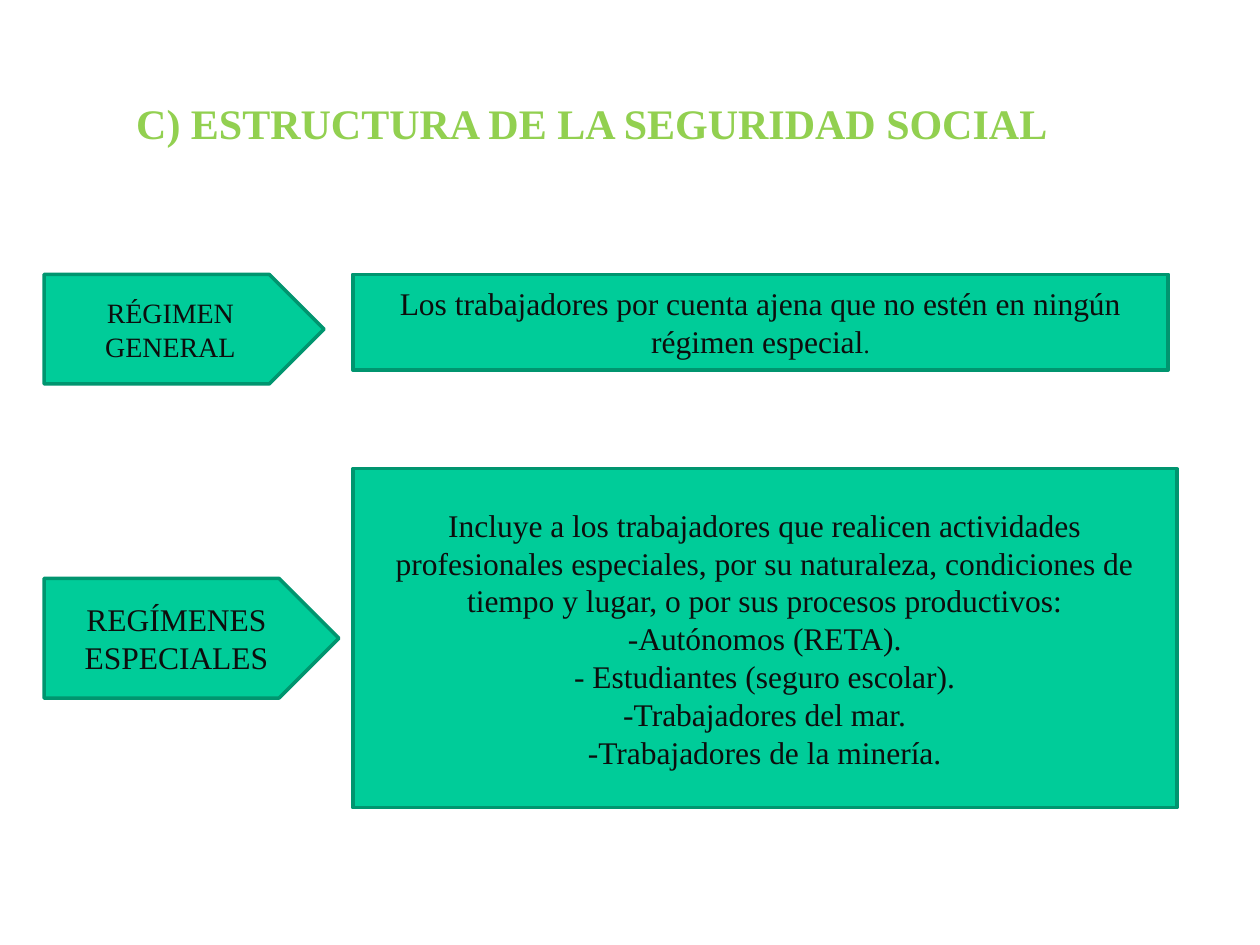
import pptx
import pptx.dml.color
import pptx.enum.shapes
import pptx.enum.text
import pptx.util

Pt = pptx.util.Pt
RGBColor = pptx.dml.color.RGBColor
Shapes = pptx.enum.shapes.MSO_SHAPE
Align = pptx.enum.text.PP_ALIGN
Anchor = pptx.enum.text.MSO_ANCHOR

WHITE = RGBColor(0xFF, 0xFF, 0xFF)
LIME = RGBColor(0x92, 0xD0, 0x50)
GREEN = RGBColor(0x00, 0xCC, 0x99)
DARK_GREEN = RGBColor(0x00, 0x95, 0x6F)
INK = RGBColor(0x0D, 0x0D, 0x0D)

LABEL_LEFT = 25.2
BOX_LEFT = 201.6


class SlideBuilder:
    font_name = "Times New Roman"
    line_width = 2

    def __init__(self, slide):
        self.slide = slide

    def paint(self, shape, fill, line):
        shape.fill.solid()
        shape.fill.fore_color.rgb = fill
        shape.line.color.rgb = line
        shape.line.width = Pt(self.line_width)

    def add_run(self, paragraph, text, size, color=INK, bold=False):
        run = paragraph.add_run()
        run.text = text
        run.font.name = self.font_name
        run.font.size = Pt(size)
        run.font.bold = bold
        run.font.color.rgb = color

    def title(self, text, left, top, width, height):
        shape = self.slide.shapes.title
        shape.left, shape.top = Pt(left), Pt(top)
        shape.width, shape.height = Pt(width), Pt(height)
        self.paint(shape, WHITE, WHITE)
        frame = shape.text_frame
        frame.auto_size = pptx.enum.text.MSO_AUTO_SIZE.NONE
        frame.vertical_anchor = Anchor.TOP
        frame.margin_top = Pt(1)
        paragraph = frame.paragraphs[0]
        paragraph.alignment = Align.JUSTIFY
        self.add_run(paragraph, text, 24, LIME, bold=True)

    def block(self, kind, left, top, width, height, paragraphs):
        """Add a green shape; each paragraph is a list of (text, size) runs."""
        shape = self.slide.shapes.add_shape(
            kind, Pt(left), Pt(top), Pt(width), Pt(height))
        shape.shadow.inherit = False
        self.paint(shape, GREEN, DARK_GREEN)
        frame = shape.text_frame
        frame.word_wrap = True
        frame.vertical_anchor = Anchor.MIDDLE
        for index, runs in enumerate(paragraphs):
            paragraph = frame.add_paragraph() if index else frame.paragraphs[0]
            paragraph.alignment = Align.CENTER
            for text, size in runs:
                self.add_run(paragraph, text, size)

    def label(self, top, width, height, text, size):
        self.block(Shapes.PENTAGON, LABEL_LEFT, top, width, height,
                   [[(text, size)]])

    def description(self, top, width, height, paragraphs):
        self.block(Shapes.RECTANGLE, BOX_LEFT, top, width, height, paragraphs)


def main():
    presentation = pptx.Presentation()
    presentation.slide_width = Pt(720)
    presentation.slide_height = Pt(540)
    title_only = presentation.slide_layouts[5]
    builder = SlideBuilder(presentation.slides.add_slide(title_only))

    builder.title("C) ESTRUCTURA DE LA SEGURIDAD SOCIAL", 70.6, 54.7, 608.4, 56.9)

    builder.label(156.8, 160, 62.6, "RÉGIMEN GENERAL", 16)
    builder.description(156.8, 466, 54.7, [[
        ("Los trabajadores por cuenta ajena que no estén en ningún "
         "régimen especial", 18),
        (".", 14),
    ]])

    special_schemes = [
        "Incluye a los trabajadores que realicen actividades profesionales "
        "especiales, por su naturaleza, condiciones de tiempo y lugar, "
        "o por sus procesos productivos:",
        "-Autónomos (RETA).",
        "- Estudiantes (seguro escolar).",
        "-Trabajadores del mar.",
        "-Trabajadores de la minería.",
    ]
    builder.label(330.5, 168.5, 68.4, "REGÍMENES ESPECIALES", 18)
    builder.description(267.8, 470.9, 193.7,
                        [[(text, 18)] for text in special_schemes])

    presentation.save("out.pptx")


if __name__ == "__main__":
    main()
